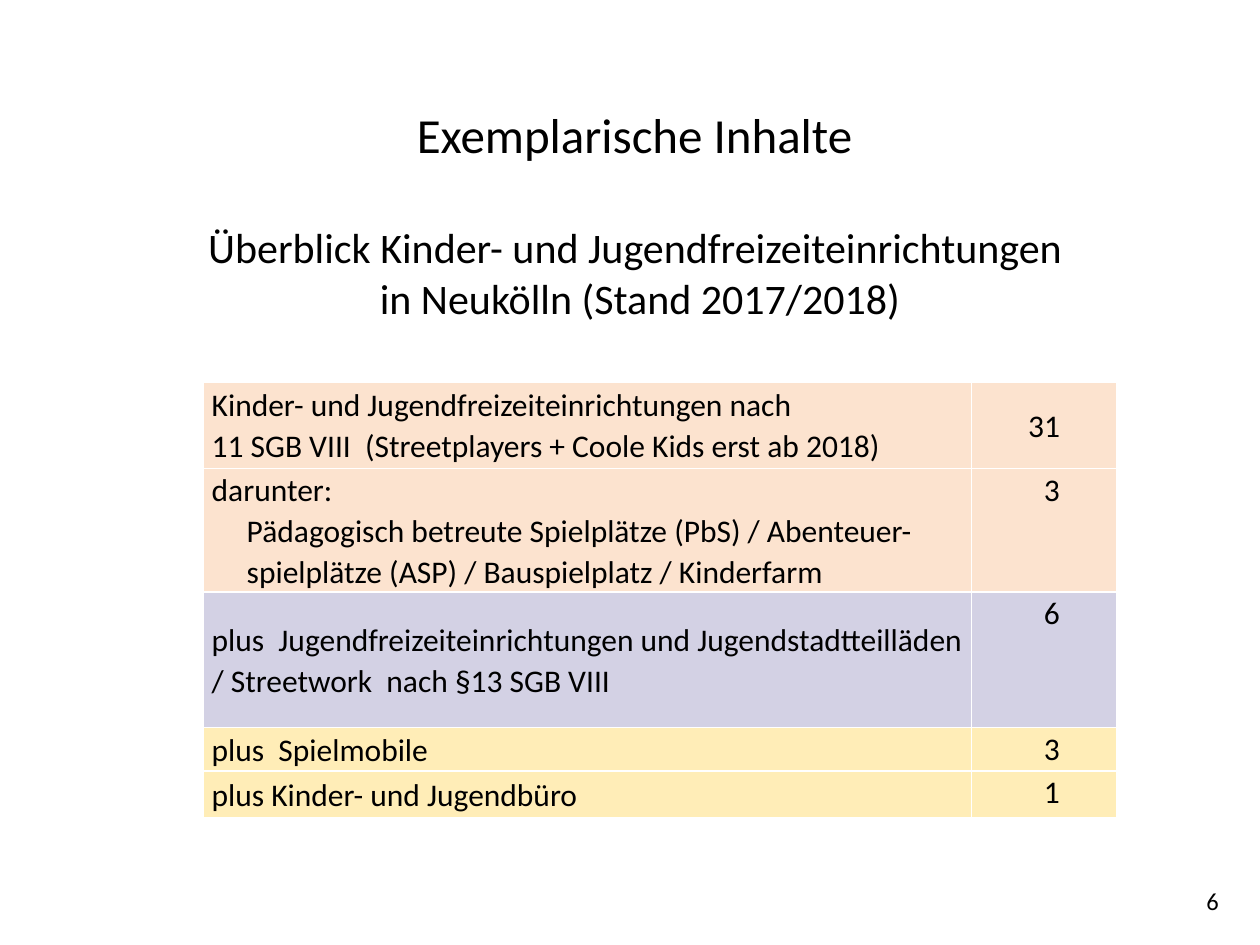
from dataclasses import dataclass

from lxml import etree
from pptx import Presentation
from pptx import util as u
from pptx.dml.color import RGBColor
from pptx.enum import text
from pptx.oxml.ns import qn

ALIGN = text.PP_ALIGN
ANCHOR = text.MSO_ANCHOR


@dataclass(frozen=True)
class Theme:
    font: str = "Calibri"
    ink: str = "000000"
    border: str = "FFFFFF"
    peach: str = "FCE3CF"
    lilac: str = "D3D1E4"
    yellow: str = "FFEDB7"
    title: int = 28
    subtitle: int = 24
    body: int = 18
    number: int = 14


class Deck:
    def __init__(self, theme):
        self.theme = theme
        self.prs = Presentation()
        self.prs.slide_width, self.prs.slide_height = u.Pt(720), u.Pt(540)
        self.s = self.prs.slides.add_slide(self.prs.slide_layouts[6])

    def fill_paragraph(self, p, content, size, align):
        p.text = content
        p.alignment = align
        for r in p.runs:
            r.font.name = self.theme.font
            r.font.size = u.Pt(size)
            r.font.color.rgb = RGBColor.from_string(self.theme.ink)

    def textbox(self, box, lines, align):
        """Each line is (text, size, space before)."""
        tf = self.s.shapes.add_textbox(*map(u.Pt, box)).text_frame
        tf.word_wrap = True
        for i, (content, size, before) in enumerate(lines):
            p = tf.add_paragraph() if i else tf.paragraphs[0]
            self.fill_paragraph(p, content, size, align)
            if before:
                p.space_before = u.Pt(before)

    def table(self, left, top, widths, heights):
        frame = self.s.shapes.add_table(
            len(heights), len(widths), u.Pt(left), u.Pt(top),
            u.Pt(sum(widths)), u.Pt(sum(heights)))
        table = frame.table
        table.first_row = table.horz_banding = False
        for col, width in zip(table.columns, widths):
            col.width = u.Pt(width)
        for row, height in zip(table.rows, heights):
            row.height = u.Pt(height)
        return table

    def cell(self, cell, lines, fill, align=ALIGN.LEFT, anchor=ANCHOR.MIDDLE, shift=0):
        """Each line is (text, indent); shift widens the left margin."""
        cell.margin_left, cell.margin_right = u.Pt(5 + shift), u.Pt(5)
        cell.margin_top = cell.margin_bottom = 0
        cell.vertical_anchor = anchor
        self.borders(cell)
        if fill:
            cell.fill.solid()
            cell.fill.fore_color.rgb = RGBColor.from_string(fill)
        else:
            cell.fill.background()
        tf = cell.text_frame
        for i, (content, indent) in enumerate(lines):
            p = tf.add_paragraph() if i else tf.paragraphs[0]
            self.fill_paragraph(p, content, self.theme.body, align)
            p.line_spacing = 1.07
            if indent:
                p._p.get_or_add_pPr().set("marL", str(u.Pt(indent)))

    def borders(self, cell):
        tc_pr = cell._tc.get_or_add_tcPr()
        for side in ("lnL", "lnR", "lnT", "lnB"):
            ln = etree.SubElement(tc_pr, qn(f"a:{side}"), w=str(u.Pt(1)))
            fill = etree.SubElement(ln, qn("a:solidFill"))
            etree.SubElement(fill, qn("a:srgbClr"), val=self.theme.border)


def main():
    th = Theme()
    deck = Deck(th)
    deck.textbox((42.5, 56, 646.5, 142), [
        ("Exemplarische Inhalte ", th.title, 0),
        ("Überblick Kinder- und Jugendfreizeiteinrichtungen \v"
         "in Neukölln (Stand 2017/2018)", th.subtitle, 33.5),
    ], ALIGN.CENTER)

    rows = [
        ([("Kinder- und Jugendfreizeiteinrichtungen nach \v"
           "11 SGB VIII  (Streetplayers + Coole Kids erst ab 2018)", 0)], "31", th.peach),
        ([("darunter:", 0),
          ("Pädagogisch betreute Spielplätze (PbS) / Abenteuer-", 20),
          ("spielplätze (ASP) / Bauspielplatz / Kinderfarm", 20)], "3", th.peach),
        ([("plus  Jugendfreizeiteinrichtungen und "
           "Jugendstadtteilläden / Streetwork  nach §13 SGB VIII", 0)], "6", th.lilac),
        ([("plus  Spielmobile", 0)], "3", th.yellow),
        ([("plus Kinder- und Jugendbüro", 0)], "1", th.yellow),
    ]
    table = deck.table(116, 190.8, (439.2, 82.8), (27.5, 49.4, 70.6, 77.4, 24.9, 26.8))
    for header in (table.cell(0, 0), table.cell(0, 1)):
        deck.cell(header, [("", 0)], None)
    for i, (label, count, fill) in enumerate(rows, start=1):
        deck.cell(table.cell(i, 0), label, fill)
        total = i == 1
        deck.cell(table.cell(i, 1), [(count, 0)], fill, ALIGN.CENTER,
                  ANCHOR.MIDDLE if total else ANCHOR.TOP, 0 if total else 9)

    deck.textbox((535.7, 502.6, 167.8, 37.4), [("6", th.number, 0)], ALIGN.RIGHT)
    deck.prs.save("out.pptx")


if __name__ == "__main__":
    main()
